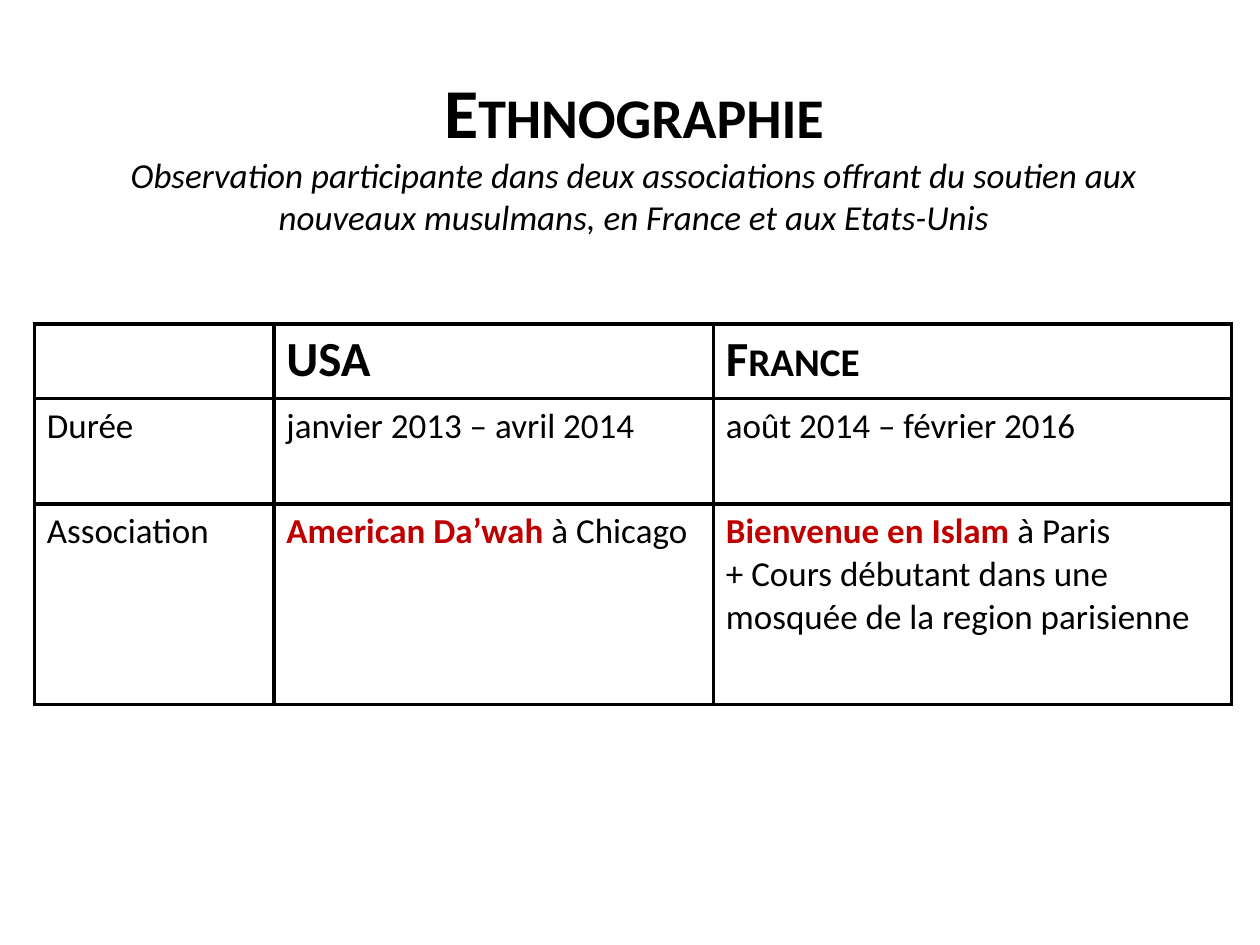
"""Build the Ethnographie slide: a title with its subtitle above a comparison table."""
from lxml import etree
from pptx import Presentation
from pptx import util as u
from pptx.dml.color import RGBColor
from pptx.enum import text
from pptx.oxml import ns

THEME = {
    "font": "Calibri",
    "ink": RGBColor.from_string("000000"),
    "accent": RGBColor.from_string("C00000"),
    "paper": RGBColor.from_string("FFFFFF"),
    "title": u.Pt(40),
    "header": u.Pt(28),
    "body": u.Pt(20),
    "border": u.Pt(2.25),
}


def add_run(p, words, size, color="ink", bold=False, italic=False, small_caps=False):
    r = p.add_run()
    r.text = words
    r.font.name, r.font.size = THEME["font"], THEME[size]
    r.font.bold, r.font.italic = bold, italic
    r.font.color.rgb = THEME[color]
    if small_caps:
        r._r.get_or_add_rPr().set("cap", "small")


def add_borders(cell):
    tcPr = cell._tc.get_or_add_tcPr()
    for side in ("lnL", "lnR", "lnT", "lnB"):
        ln = etree.SubElement(tcPr, ns.qn(f"a:{side}"), w=str(THEME["border"]))
        fill = etree.SubElement(ln, ns.qn("a:solidFill"))
        etree.SubElement(fill, ns.qn("a:srgbClr"), val=str(THEME["ink"]))


prs = Presentation()
prs.slide_width, prs.slide_height = u.Cm(25.4), u.Cm(19.05)
s = prs.slides.add_slide(prs.slide_layouts[6])

title = s.shapes.add_textbox(u.Cm(1.35), u.Cm(0.99), u.Cm(22.86), u.Cm(4.19))
tf = title.text_frame
tf.word_wrap = True
tf.vertical_anchor = text.MSO_ANCHOR.MIDDLE
p = tf.paragraphs[0]
p.alignment = text.PP_ALIGN.CENTER
p.space_after = u.Pt(12)
add_run(p, "E", "title", bold=True)
add_run(p, "thnographie", "title", bold=True, small_caps=True)
p.add_line_break()
add_run(p, "Observation participante dans deux associations offrant du soutien aux "
           "nouveaux musulmans, en France et aux Etats-Unis", "body", italic=True)

headers = ["", "USA", "France"]
rows = [
    ["Durée", "janvier 2013 – avril 2014", "août 2014 – février 2016"],
    ["Association", "à Chicago",
     "à Paris\n+ Cours débutant dans une mosquée de la region parisienne"],
]
association_names = {(2, 1): "American Da’wah ", (2, 2): "Bienvenue en Islam "}
col_widths = [4.83, 8.86, 10.44]
row_heights = [1.5, 2.13, 4.04]

table = s.shapes.add_table(
    len(row_heights), len(col_widths), u.Cm(0.69), u.Cm(6.53),
    u.Cm(sum(col_widths)), u.Cm(sum(row_heights))).table
table.first_row = table.horz_banding = False
for col, width in zip(table.columns, col_widths):
    col.width = u.Cm(width)
for row, height in zip(table.rows, row_heights):
    row.height = u.Cm(height)

for i, words_in_row in enumerate([headers, *rows]):
    for j, words in enumerate(words_in_row):
        cell = table.cell(i, j)
        add_borders(cell)
        cell.fill.solid()
        cell.fill.fore_color.rgb = THEME["paper"]
        for k, line in enumerate(words.split("\n")):
            p = cell.text_frame.add_paragraph() if k else cell.text_frame.paragraphs[0]
            if k == 0 and (i, j) in association_names:
                add_run(p, association_names[i, j], "body", "accent", bold=True)
            if line:
                add_run(p, line, "body" if i else "header", bold=i == 0, small_caps=i == 0)

prs.save("out.pptx")
